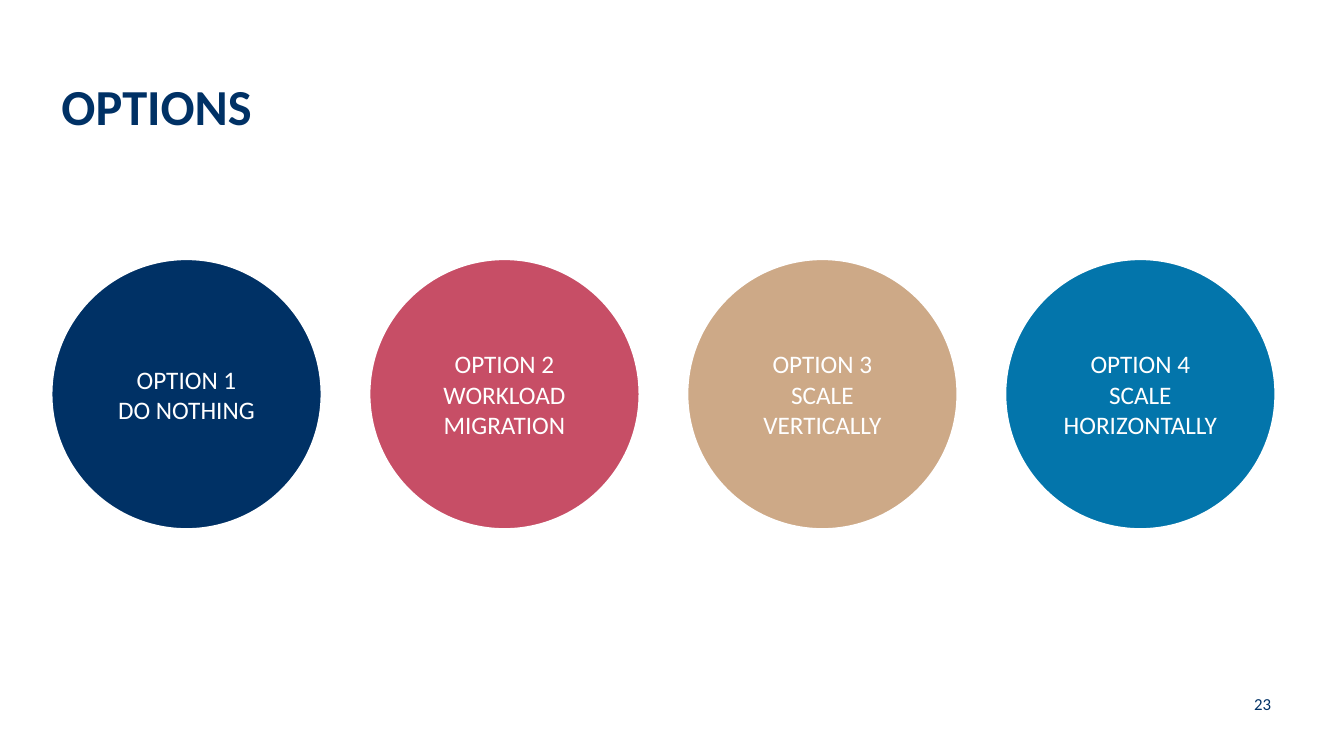
from pptx import Presentation, util as u
from pptx.dml.color import RGBColor
from pptx.enum import shapes, text

NAVY = RGBColor(0x00, 0x31, 0x65)
ROSE = RGBColor(0xC7, 0x4E, 0x66)
SAND = RGBColor(0xCD, 0xA9, 0x87)
BLUE = RGBColor(0x03, 0x75, 0xAB)
WHITE = RGBColor(0xFF, 0xFF, 0xFF)


def write(frame, words, size, color, bold=False, align=text.PP_ALIGN.LEFT,
          anchor=text.MSO_ANCHOR.MIDDLE, insets=(0.1, 0.05)):
    """Fill a text frame; \\v breaks a line, \\n starts a paragraph."""
    frame.text = words
    frame.word_wrap = True
    frame.auto_size = text.MSO_AUTO_SIZE.NONE
    frame.vertical_anchor = anchor
    frame.margin_left = frame.margin_right = u.Inches(insets[0])
    frame.margin_top = frame.margin_bottom = u.Inches(insets[1])
    for paragraph in frame.paragraphs:
        paragraph.alignment = align
        for run in paragraph.runs:
            run.font.name = "Calibri"
            run.font.size = u.Pt(size)
            run.font.bold = bold
            run.font.color.rgb = color


deck = Presentation()
deck.slide_width, deck.slide_height = u.Inches(13.33), u.Inches(7.5)
slide = deck.slides.add_slide(deck.slide_layouts[5])

# Content area shared by the heading and the row of options
left, width = u.Inches(0.51), u.Inches(12.14)

heading = slide.shapes.title
heading.left, heading.top = left, u.Inches(0.14)
heading.width, heading.height = width, u.Inches(1.26)
write(heading.text_frame, "OPTIONS", 36, NAVY, bold=True,
      anchor=text.MSO_ANCHOR.BOTTOM)

options = [
    ("OPTION 1\vDO NOTHING", NAVY),
    ("OPTION 2\vWORKLOAD\vMIGRATION", ROSE),
    ("OPTION 3\vSCALE\vVERTICALLY", SAND),
    ("OPTION 4\vSCALE\nHORIZONTALLY", BLUE),
]
diameter = u.Inches(2.68)
pitch = (width - diameter) // (len(options) - 1)
for column, (words, color) in enumerate(options):
    option = slide.shapes.add_shape(
        shapes.MSO_SHAPE.OVAL, left + column * pitch, u.Inches(2.57),
        diameter, diameter)
    option.shadow.inherit = False
    option.fill.solid()
    option.fill.fore_color.rgb = color
    option.line.color.rgb = WHITE
    option.line.width = u.Pt(1.5)
    write(option.text_frame, words, 18, WHITE,
          align=text.PP_ALIGN.CENTER, insets=(0.08, 0.04))

page_number = slide.shapes.add_textbox(
    u.Inches(12.34), u.Inches(6.86), u.Inches(0.49), u.Inches(0.25))
write(page_number.text_frame, "23", 12, NAVY)

deck.save("out.pptx")
